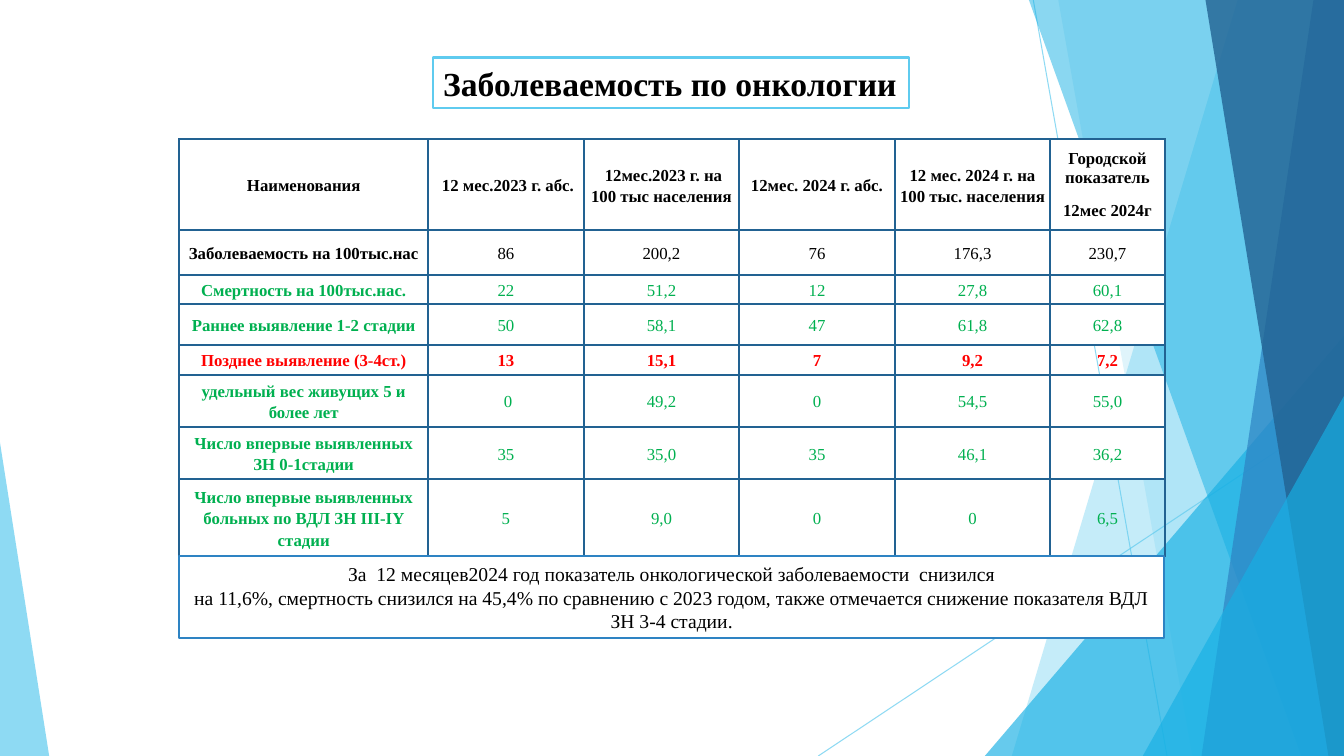
from dataclasses import dataclass

from lxml import etree
from pptx import Presentation
from pptx.dml.color import RGBColor
from pptx.enum.shapes import MSO_CONNECTOR, MSO_SHAPE
from pptx.enum.text import MSO_ANCHOR, PP_ALIGN
from pptx.oxml.ns import qn
from pptx.util import Cm, Pt

STRAIGHT = MSO_CONNECTOR.STRAIGHT
RECTANGLE = MSO_SHAPE.RECTANGLE
TRIANGLE = MSO_SHAPE.ISOSCELES_TRIANGLE
MIDDLE = MSO_ANCHOR.MIDDLE
LEFT, CENTER = PP_ALIGN.LEFT, PP_ALIGN.CENTER

SLIDE_WIDTH, SLIDE_HEIGHT = 33.87, 19.05


@dataclass(frozen=True)
class Theme:
    font: str = "Times New Roman"
    white: str = "FFFFFF"
    black: str = "000000"
    green: str = "00B050"
    red: str = "FF0000"
    sky: str = "5FCBEF"
    cyan: str = "17B0E4"
    blue: str = "2E83C3"
    navy: str = "226292"
    title_size: float = 24
    note_size: float = 14
    table_size: float = 12
    border: float = 1.5
    hairline: float = 0.75


class SlideBuilder:
    def __init__(self, page, theme):
        self.page = page
        self.theme = theme

    def fade(self, element, percent):
        color = next(element.iter(qn("a:srgbClr")))
        etree.SubElement(color, qn("a:alpha"), val=str(percent * 1000))

    def paint(self, fill, color):
        fill.solid()
        fill.fore_color.rgb = RGBColor.from_string(color)

    def ray(self, start, end):
        points = [Cm(value) for value in start + end]
        line = self.page.shapes.add_connector(STRAIGHT, *points)
        line.line.width = Pt(self.theme.hairline)
        self.paint(line.line.fill, self.theme.sky)
        properties = line._element.spPr
        self.fade(properties, 70)
        etree.SubElement(properties, qn("a:effectLst"))

    def facet(self, shape, color, opacity):
        shape.shadow.inherit = False
        self.paint(shape.fill, color)
        self.fade(shape._element.spPr, opacity)
        shape.line.fill.background()

    def band(self, top_x, bottom_x, color, opacity):
        outline = self.page.shapes.build_freeform(Cm(top_x), Cm(0))
        corners = [(SLIDE_WIDTH, 0), (SLIDE_WIDTH, SLIDE_HEIGHT), (bottom_x, SLIDE_HEIGHT)]
        outline.add_line_segments([(Cm(x), Cm(y)) for x, y in corners], close=True)
        self.facet(outline.convert_to_shape(), color, opacity)

    def triangle(self, left, top, width, apex, color, opacity):
        shape = self.page.shapes.add_shape(
            TRIANGLE, Cm(left), Cm(top), Cm(width), Cm(SLIDE_HEIGHT - top))
        shape.adjustments[0] = apex
        self.facet(shape, color, opacity)

    def set_lines(self, frame, lines, size, color, bold, align, spacing=None, gap=None):
        for index, line in enumerate(lines):
            para = frame.paragraphs[0] if index == 0 else frame.add_paragraph()
            para.text = line
            para.alignment = align
            if spacing:
                para.line_spacing = spacing
            if gap and index < len(lines) - 1:
                para.space_after = Pt(gap)
            para.font.name = self.theme.font
            para.font.size = Pt(size)
            para.font.bold = bold
            para.font.color.rgb = RGBColor.from_string(color)

    def framed_text(self, place, lines, size, border, bold, align):
        box = self.page.shapes.add_shape(RECTANGLE, *[Cm(value) for value in place])
        box.shadow.inherit = False
        self.paint(box.fill, self.theme.white)
        self.paint(box.line.fill, border)
        box.line.width = Pt(self.theme.border)
        box.text_frame.word_wrap = True
        self.set_lines(box.text_frame, lines, size, self.theme.black, bold, align)

    def style_cell(self, cell, filled):
        cell.vertical_anchor = MIDDLE
        cell.margin_left = cell.margin_right = Cm(0.08)
        cell.margin_top = cell.margin_bottom = Cm(0.08)
        properties = cell._tc.get_or_add_tcPr()
        for side in ("lnL", "lnR", "lnT", "lnB"):
            edge = etree.SubElement(
                properties, qn(f"a:{side}"), w=str(Pt(self.theme.border)))
            solid = etree.SubElement(edge, qn("a:solidFill"))
            etree.SubElement(solid, qn("a:srgbClr"), val=self.theme.navy)
        if filled:
            self.paint(cell.fill, self.theme.white)
        else:
            cell.fill.background()

    def table(self, left, top, widths, heights, header, rows):
        table = self.page.shapes.add_table(
            len(heights), len(widths), Cm(left), Cm(top),
            Cm(sum(widths)), Cm(sum(heights))).table
        table.first_row = table.horz_banding = False
        for column, width in zip(table.columns, widths):
            column.width = Cm(width)
        for row, height in zip(table.rows, heights):
            row.height = Cm(height)
        styled_rows = [(self.theme.black, True, True, header)] + rows
        for row_index, (color, all_bold, filled, texts) in enumerate(styled_rows):
            for column_index, text in enumerate(texts):
                cell = table.cell(row_index, column_index)
                self.style_cell(cell, filled)
                lines = text.split("\n")
                spacing = 1.15 if len(lines) == 1 else 1.0
                self.set_lines(cell.text_frame, lines, self.theme.table_size, color,
                               all_bold or column_index == 0, CENTER, spacing, 10)


def main():
    theme = Theme()
    deck = Presentation()
    deck.slide_width, deck.slide_height = Cm(SLIDE_WIDTH), Cm(SLIDE_HEIGHT)
    builder = SlideBuilder(deck.slides.add_slide(deck.slide_layouts[6]), theme)

    builder.ray((26.04, 0), (29.41, SLIDE_HEIGHT))
    builder.ray((SLIDE_WIDTH, 10.24), (20.62, SLIDE_HEIGHT))
    builder.band(31.19, 25.5, theme.sky, 36)
    builder.band(26.67, 30.05, theme.sky, 20)
    builder.triangle(24.82, 8.46, 9.05, 1, theme.cyan, 66)
    builder.band(25.93, 32.79, theme.cyan, 50)
    builder.band(33.1, 30.28, theme.blue, 70)
    builder.band(30.38, 33.48, theme.navy, 80)
    builder.triangle(28.8, 9.98, 5.07, 1, theme.cyan, 66)
    builder.triangle(0, 11.15, 1.24, 0, theme.sky, 70)

    builder.framed_text((10.92, 1.45, 11.99, 1.27), ["Заболеваемость по онкологии"],
                        theme.title_size, theme.sky, True, LEFT)

    header = ["Наименования", " 12 мес.2023 г. абс.", " 12мес.2023 г. на 100 тыс населения",
              "12мес. 2024 г. абс.", "12 мес. 2024 г. на 100 тыс. населения",
              "Городской показатель\n12мес 2024г"]
    rows = [
        (theme.black, False, True,
         ["Заболеваемость на 100тыс.нас", "86", "200,2", "76", "176,3", "230,7"]),
        (theme.green, False, True,
         ["Смертность на 100тыс.нас.", "22", "51,2", "12", "27,8", "60,1"]),
        (theme.green, False, True,
         ["Раннее выявление 1-2 стадии", "50", "58,1", "47", "61,8", "62,8"]),
        (theme.red, True, False,
         ["Позднее выявление (3-4ст.)", "13", "15,1", "7", "9,2", "7,2"]),
        (theme.green, False, True,
         ["удельный вес живущих 5 и более лет", " 0", "49,2", "0", "54,5", "55,0"]),
        (theme.green, False, True,
         ["Число впервые выявленных ЗН 0-1стадии", "35", "35,0", "35", "46,1", "36,2"]),
        (theme.green, False, False,
         ["Число впервые выявленных больных по ВДЛ ЗН III-IY стадии",
          "5", "9,0", "0", "0", "6,5"]),
    ]
    builder.table(4.52, 3.51, [6.27] + [3.92] * 4 + [2.88],
                  [2.29, 1.12, 0.74, 1.04, 0.74, 1.32, 1.32, 1.93], header, rows)

    builder.framed_text(
        (4.52, 14.02, 24.82, 2.06),
        ["За  12 месяцев2024 год показатель онкологической заболеваемости  снизился",
         "на 11,6%, смертность снизился на 45,4% по сравнению с 2023 годом, "
         "также отмечается снижение показателя ВДЛ ЗН 3-4 стадии."],
        theme.note_size, theme.blue, False, CENTER)

    deck.save("out.pptx")


if __name__ == "__main__":
    main()
